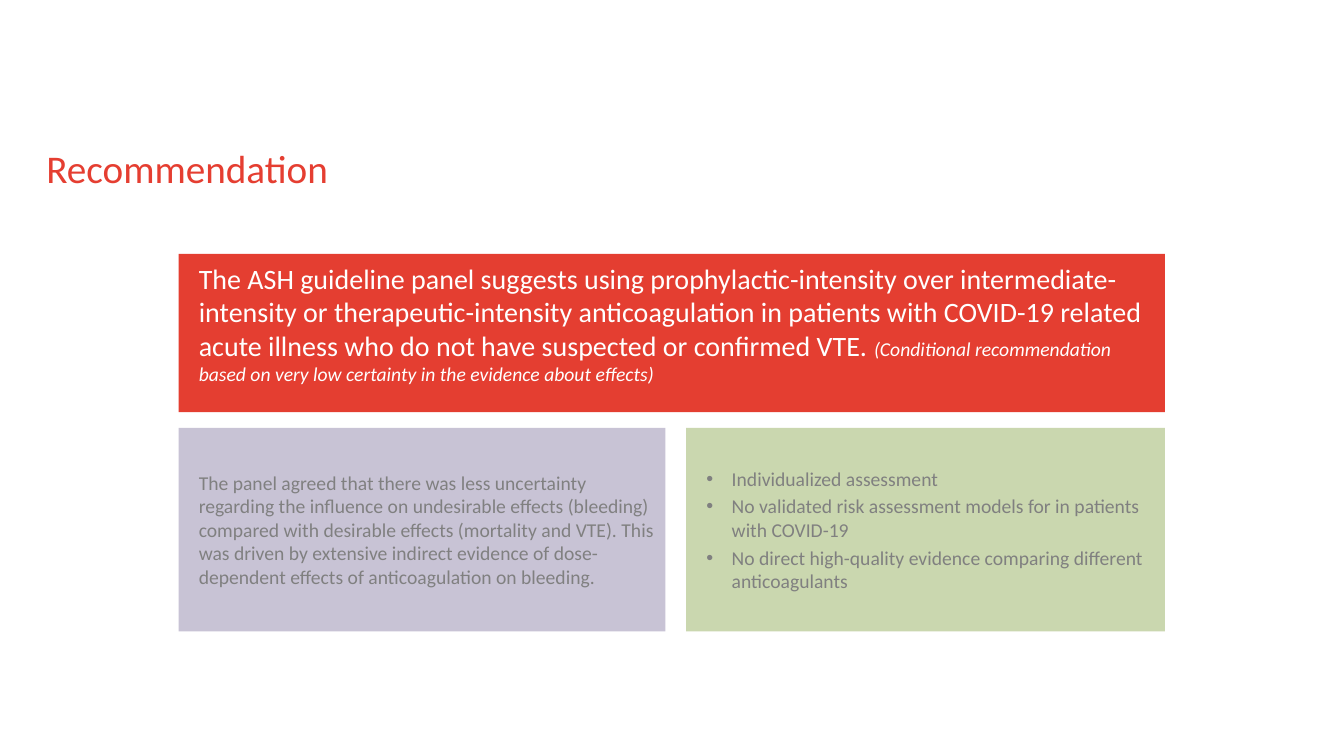
from pptx import Presentation
from pptx.dml.color import RGBColor
from pptx.enum.shapes import MSO_SHAPE
from pptx.enum.text import MSO_ANCHOR, MSO_AUTO_SIZE, PP_ALIGN
from pptx.util import Cm, Pt

HUES = {
    "title": "E53E31",
    "red": "E43E31",
    "lilac": "C8C3D5",
    "green": "CAD7AF",
    "white": "FFFFFF",
    "gray": "808080",
}
LEFT, WIDE = 4.5, 24.86
LOW, TALL = 10.78, 5.13


def dress(shape, box, pads, anchor, fill=None):
    shape.left, shape.top, shape.width, shape.height = map(Cm, box)
    if fill:
        shape.fill.solid()
        shape.fill.fore_color.rgb = RGBColor.from_string(HUES[fill])
    frame = shape.text_frame
    frame.word_wrap = True
    frame.auto_size = MSO_AUTO_SIZE.NONE
    frame.vertical_anchor = anchor
    (frame.margin_left, frame.margin_top,
     frame.margin_right, frame.margin_bottom) = map(Cm, pads)
    return frame


def write(para, text, size, hue, slant=False):
    para.alignment = PP_ALIGN.LEFT
    run = para.add_run()
    run.text = text
    font = run.font
    font.name = "Calibri"
    font.size = Pt(size)
    font.italic = slant
    font.color.rgb = RGBColor.from_string(HUES[hue])


deck = Presentation()
deck.slide_width, deck.slide_height = Cm(33.87), Cm(19.05)
slide = deck.slides.add_slide(deck.slide_layouts[1])

title = dress(slide.shapes.title, (1.17, 3.73, 30.48, 1.17),
              (0, 0, 0, 0), MSO_ANCHOR.MIDDLE)
title.paragraphs[0].line_spacing = 0.9
write(title.paragraphs[0], "Recommendation", 28, "title")

panels = [
    ((LEFT, 6.4, WIDE, 3.99), (0.51, 0.18, 0.25, 0.25),
     MSO_ANCHOR.TOP, "red", [
        ("The ASH guideline panel suggests using prophylactic-intensity over "
         "intermediate-intensity or therapeutic-intensity anticoagulation in "
         "patients with COVID-19 related acute illness who do not have "
         "suspected or confirmed VTE. ", 20, "white", False),
        ("(Conditional recommendation based on very low certainty in the "
         "evidence about effects)", 14, "white", True)]),
    ((LEFT, LOW, 12.27, TALL), (0.51, 0.25, 0.25, 0.25),
     MSO_ANCHOR.MIDDLE, "lilac", [
        ("The panel agreed that there was less uncertainty regarding the "
         "influence on undesirable effects (bleeding) compared with desirable "
         "effects (mortality and VTE). This was driven by extensive indirect "
         "evidence of dose-dependent effects of anticoagulation on bleeding.",
         14, "gray", False)]),
]
for box, pads, anchor, fill, runs in panels:
    panel = slide.shapes.add_shape(MSO_SHAPE.RECTANGLE, *map(Cm, box))
    panel.shadow.inherit = False
    panel.line.fill.background()
    frame = dress(panel, box, pads, anchor, fill)
    for run in runs:
        write(frame.paragraphs[0], *run)

points = [
    "Individualized assessment",
    "No validated risk assessment models for in patients with COVID-19",
    "No direct high-quality evidence comparing different anticoagulants",
]
span = 12.07
body = dress(slide.placeholders[1], (LEFT + WIDE - span, LOW, span, TALL),
             (0.51, 0.25, 0.25, 0.25), MSO_ANCHOR.MIDDLE, "green")
for rank, point in enumerate(points):
    para = body.add_paragraph() if rank else body.paragraphs[0]
    props = para._p.get_or_add_pPr()
    props.set("marL", str(Cm(0.64)))
    props.set("indent", str(Cm(-0.64)))
    para.space_before = Pt(3 if rank else 0)
    write(para, point, 14, "gray")

deck.save("out.pptx")
